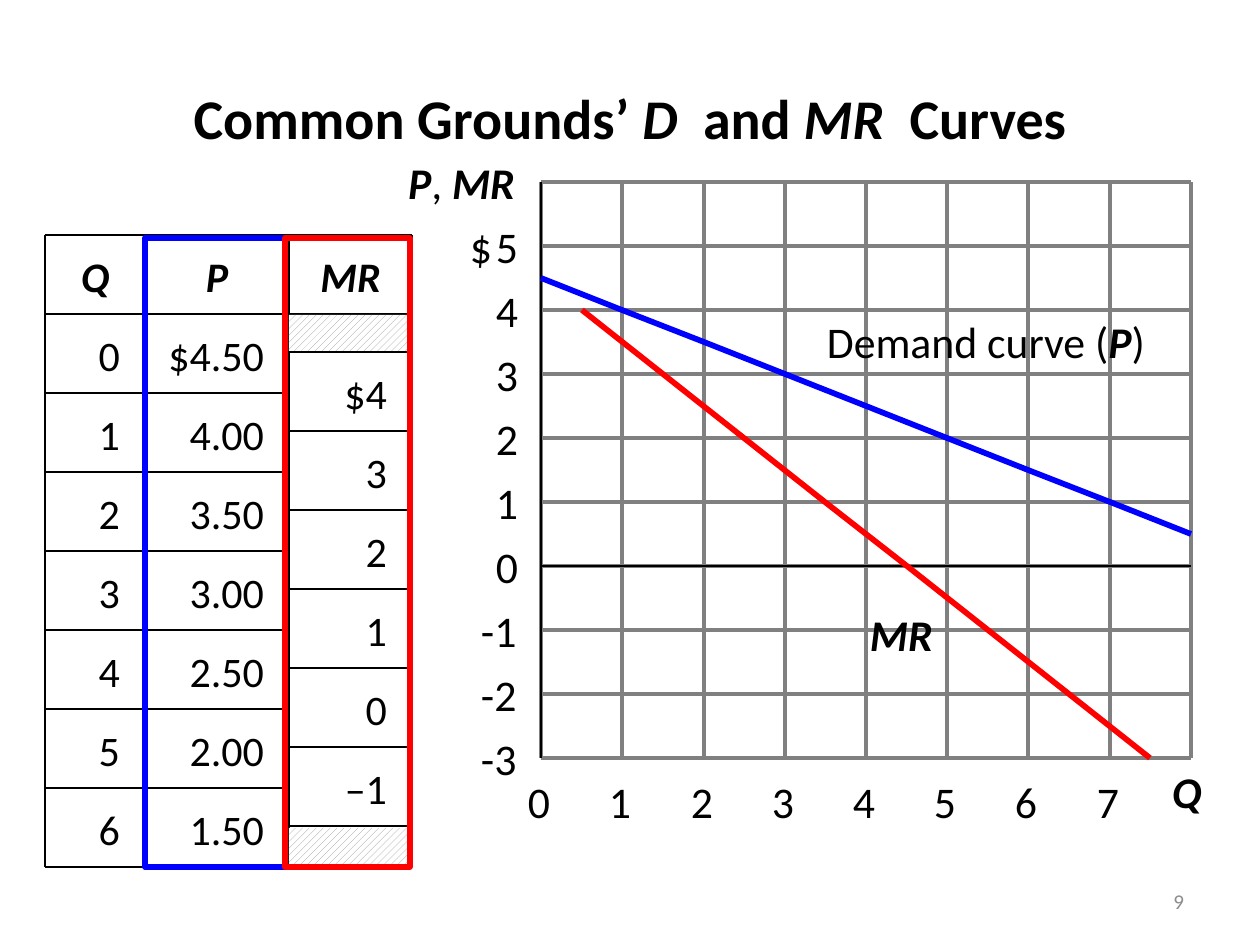
from dataclasses import dataclass
from typing import Optional

from lxml.etree import SubElement
from pptx import Presentation
from pptx.dml.color import RGBColor
from pptx.enum.dml import MSO_PATTERN
from pptx.enum.shapes import MSO_CONNECTOR, MSO_SHAPE
from pptx.enum.text import MSO_ANCHOR, PP_ALIGN
from pptx.oxml.ns import qn
from pptx.util import Pt

SCALE = 914400 / 126
COLORS = {
    "ink": "000000",
    "paper": "FFFFFF",
    "grid": "808080",
    "demand": "0000FF",
    "revenue": "FF0000",
    "hatch": "969696",
    "number": "8C8C8C",
}

GRID_LEFT, GRID_RIGHT, GRID_TOP, GRID_BOTTOM, ZERO = 541, 1191, 182, 758, 566
UNIT_X, UNIT_Y = (GRID_RIGHT - GRID_LEFT) / 8, 64
COLUMN_EDGES = [45, 145, 289, 412]
TABLE_TOP, ROW_HEIGHT = 235, 79
PRICES = ["$4.50", "4.00", "3.50", "3.00", "2.50", "2.00", "1.50"]
REVENUES = ["$4", "3", "2", "1", "0", "–1"]


@dataclass(frozen=True)
class Box:
    left: int
    top: int
    width: int
    height: int


@dataclass(frozen=True)
class Span:
    text: str
    bold: bool = False
    italic: bool = False


@dataclass(frozen=True)
class Style:
    size: int = 25
    align: PP_ALIGN = PP_ALIGN.LEFT
    anchor: MSO_ANCHOR = MSO_ANCHOR.TOP
    insets: tuple = (0, 0, 0, 0)
    wrap: bool = False
    color: str = "ink"
    spacing: Optional[float] = None
    before: int = 0


PLAIN = Style()
CAPTION = Style(insets=(13, 6, 13, 6))
TITLE = Style(32, PP_ALIGN.CENTER, MSO_ANCHOR.MIDDLE, (13, 6, 13, 6), True)
HEADER = Style(24, PP_ALIGN.CENTER, MSO_ANCHOR.MIDDLE, (13, 6, 13, 6), True, "ink", 1.05, 4)
CELL = Style(24, PP_ALIGN.RIGHT, MSO_ANCHOR.MIDDLE, (13, 6, 25, 6), True, "ink", 1.05, 4)
NUMBER = Style(12, PP_ALIGN.RIGHT, MSO_ANCHOR.MIDDLE, (13, 6, 13, 6), True, "number")


def px(length: float) -> int:
    """Turn pixels into EMU."""
    return round(length * SCALE)


def rgb(name: str) -> RGBColor:
    """Look up a named colour."""
    return RGBColor.from_string(COLORS[name])


def grid_x(quantity: float) -> int:
    """Give the pixel column of a quantity."""
    return round(GRID_LEFT + UNIT_X * quantity)


def grid_y(price: float) -> int:
    """Give the pixel row of a price."""
    return round(ZERO - UNIT_Y * price)


def write(shape, spans: list[Span], style: Style) -> None:
    """Fill a shape with one styled paragraph."""
    frame = shape.text_frame
    frame.word_wrap = style.wrap
    frame.vertical_anchor = style.anchor
    frame.margin_left, frame.margin_top, frame.margin_right, frame.margin_bottom = map(px, style.insets)
    para = frame.paragraphs[0]
    para.alignment = style.align
    if style.spacing:
        para.line_spacing = style.spacing
        para.space_before = Pt(style.before)
    for span in spans:
        run = para.add_run()
        run.text = span.text
        run.font.name = "Calibri"
        run.font.size = Pt(style.size)
        run.font.bold = span.bold
        run.font.italic = span.italic
        run.font.color.rgb = rgb(style.color)


def add_text(page, box: Box, spans: list[Span], style: Style) -> None:
    """Add a text box."""
    shape = page.shapes.add_textbox(px(box.left), px(box.top), px(box.width), px(box.height))
    write(shape, spans, style)


def add_rect(page, box: Box, fill: Optional[str] = None, line: Optional[str] = None, weight: float = 1):
    """Add a rectangle with an optional fill and outline."""
    shape = page.shapes.add_shape(
        MSO_SHAPE.RECTANGLE, px(box.left), px(box.top), px(box.width), px(box.height))
    shape.shadow.inherit = False
    if fill == "hatch":
        shape.fill.patterned()
        shape.fill.pattern = MSO_PATTERN.WIDE_UPWARD_DIAGONAL
        shape.fill.fore_color.rgb = rgb("hatch")
        shape.fill.back_color.rgb = rgb("paper")
    elif fill:
        shape.fill.solid()
        shape.fill.fore_color.rgb = rgb(fill)
    else:
        shape.fill.background()
    if line:
        shape.line.color.rgb = rgb(line)
        shape.line.width = Pt(weight)
    else:
        shape.line.fill.background()
    return shape


def add_line(page, start: tuple, end: tuple, color: str, weight: float) -> None:
    """Add a straight line."""
    line = page.shapes.add_connector(MSO_CONNECTOR.STRAIGHT, *map(px, start + end))
    line.line.color.rgb = rgb(color)
    line.line.width = Pt(weight)
    SubElement(line._element.spPr, qn("a:effectLst"))


def add_curve(page, points: list[tuple], color: str) -> None:
    """Draw a curve through quantity and price points."""
    places = [(grid_x(quantity), grid_y(price)) for quantity, price in points]
    builder = page.shapes.build_freeform(*places[0], scale=SCALE)
    builder.add_line_segments(places[1:], close=False)
    curve = builder.convert_to_shape()
    curve.shadow.inherit = False
    curve.fill.background()
    curve.line.color.rgb = rgb(color)
    curve.line.width = Pt(3.25)


def draw_graph(page) -> None:
    """Draw the grid, axes, labels and both curves."""
    for price in range(-3, 7):
        add_line(page, (GRID_LEFT, grid_y(price)), (GRID_RIGHT, grid_y(price)), "grid", 0)
    for quantity in range(9):
        add_line(page, (grid_x(quantity), GRID_TOP), (grid_x(quantity), GRID_BOTTOM), "grid", 0)
    for price in range(-3, 6):
        left = 481 if price < 0 else 496
        add_text(page, Box(left, grid_y(price) - 26, 520 - left, 53), [Span(str(price))], PLAIN)
    for quantity in range(8):
        tick = add_rect(page, Box(grid_x(quantity) - 13, 775, 24, 53), "paper")
        write(tick, [Span(str(quantity))], PLAIN)
    add_text(page, Box(470, 220, 24, 53), [Span("$")], PLAIN)
    add_text(page, Box(1172, 765, 34, 53), [Span("Q", True, True)], PLAIN)
    add_text(page, Box(408, 156, 122, 53),
             [Span("P", True, True), Span(", "), Span("MR", True, True)], PLAIN)
    add_line(page, (GRID_LEFT, GRID_TOP), (GRID_LEFT, GRID_BOTTOM), "ink", 1.5)
    add_line(page, (GRID_LEFT, ZERO), (GRID_RIGHT, ZERO), "ink", 1.5)
    add_curve(page, [(step + 0.5, 4 - step) for step in range(8)], "revenue")
    add_text(page, Box(857, 602, 93, 66), [Span("MR", True, True)], CAPTION)
    add_curve(page, [(step, 4.5 - step / 2) for step in range(9)], "demand")
    add_text(page, Box(814, 309, 380, 66),
             [Span("Demand curve ("), Span("P", True, True), Span(")")], CAPTION)


def draw_schedule(page) -> None:
    """Draw the schedule, whose MR column sits half a row lower."""
    left, right = COLUMN_EDGES[0], COLUMN_EDGES[-1]
    bottom = TABLE_TOP + ROW_HEIGHT * (len(PRICES) + 1)
    columns = [(start, end - start) for start, end in zip(COLUMN_EDGES, COLUMN_EDGES[1:])]
    for (start, width), name in zip(columns, ["Q", "P", "MR"]):
        add_text(page, Box(start, TABLE_TOP, width, ROW_HEIGHT), [Span(name, True, True)], HEADER)
    for quantity, price in enumerate(PRICES):
        top = TABLE_TOP + ROW_HEIGHT * (quantity + 1)
        for (start, width), value in zip(columns, [str(quantity), price]):
            add_text(page, Box(start, top, width, ROW_HEIGHT), [Span(value)], CELL)
    for top in range(TABLE_TOP, bottom + 1, ROW_HEIGHT):
        add_line(page, (left, top), (right, top), "ink", 1)
    for edge in COLUMN_EDGES:
        add_line(page, (edge, TABLE_TOP), (edge, bottom), "ink", 1)
    start, width = columns[-1]
    for top in (315, 828):
        add_rect(page, Box(start, top, width, 37), "hatch")
    for step, value in enumerate(REVENUES):
        cell = add_rect(page, Box(start, 352 + ROW_HEIGHT * step, width, ROW_HEIGHT), "paper", "ink")
        write(cell, [Span(value)], CELL)
    add_rect(page, Box(145, 238, 140, 629), None, "demand", 3)
    add_rect(page, Box(285, 238, 125, 629), None, "revenue", 3)


def main() -> None:
    """Build the slide and save it."""
    deck = Presentation()
    deck.slide_width, deck.slide_height = px(1260), px(945)
    page = deck.slides.add_slide(deck.slide_layouts[6])
    add_text(page, Box(63, 38, 1134, 158), [
        Span("Common Grounds’ ", True), Span("D", True, True), Span("  and ", True),
        Span("MR", True, True), Span("  Curves", True)], TITLE)
    draw_graph(page)
    draw_schedule(page)
    add_text(page, Box(903, 876, 294, 50), [Span("9")], NUMBER)
    deck.save("out.pptx")


if __name__ == "__main__":
    main()
